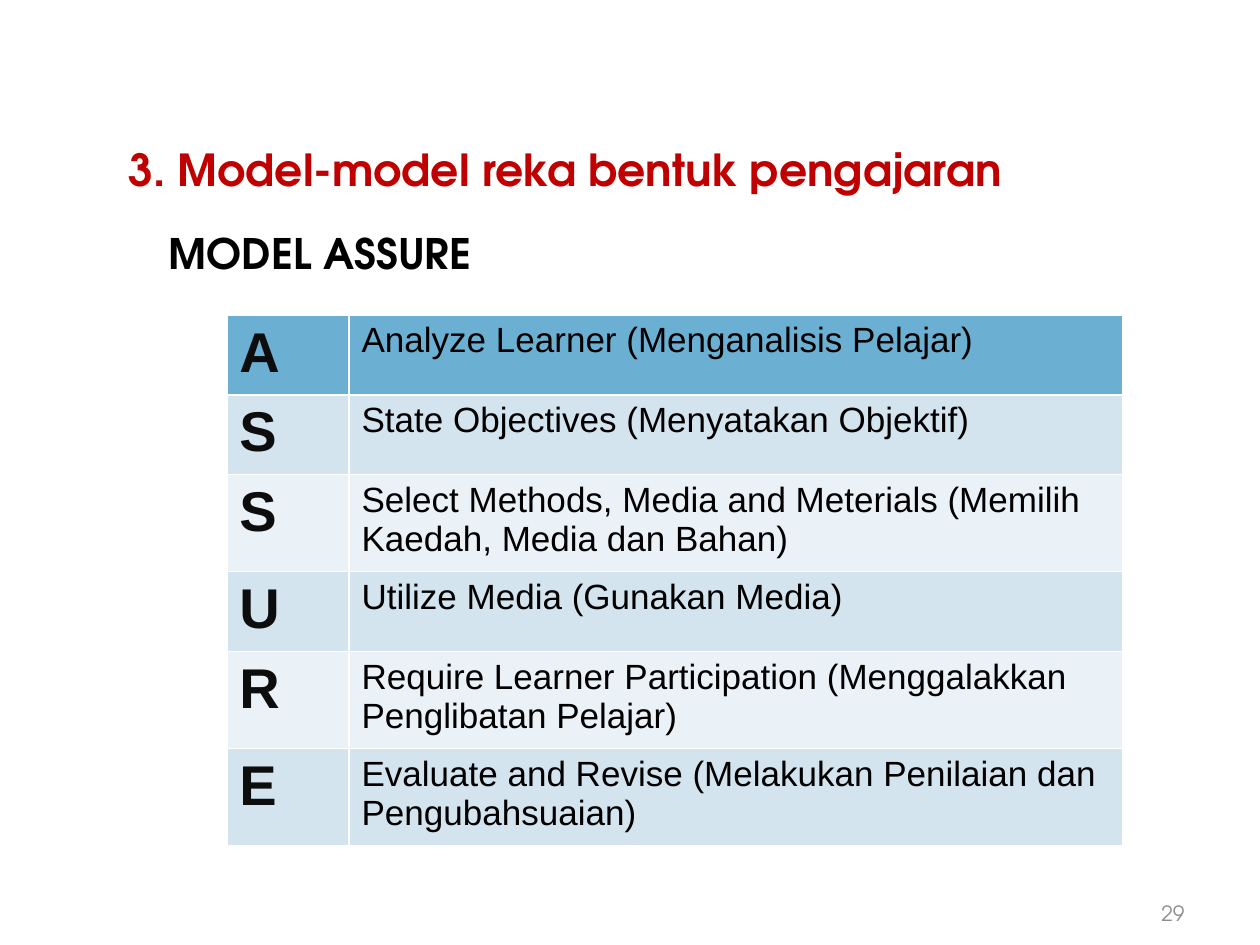
import pptx
import pptx.util
import pptx.dml.color
import pptx.enum.text

Inches, Pt = pptx.util.Inches, pptx.util.Pt
RGBColor = pptx.dml.color.RGBColor
Align, Anchor = pptx.enum.text.PP_ALIGN, pptx.enum.text.MSO_ANCHOR

RED = RGBColor(0xC0, 0x00, 0x00)
BLACK = RGBColor(0x00, 0x00, 0x00)
NEAR_BLACK = RGBColor(0x0D, 0x0D, 0x0D)
GREY = RGBColor(0x8C, 0x8C, 0x8C)
HEADER_BLUE = RGBColor(0x6B, 0xB0, 0xD3)
BAND_DARK = RGBColor(0xD4, 0xE4, 0xEF)
BAND_LIGHT = RGBColor(0xEB, 0xF2, 0xF7)
HEADING_FONT, TABLE_FONT = "TeX Gyre Adventor", "Arial"

STEPS = [
    ("A", "Analyze Learner (Menganalisis Pelajar)", 0.63),
    ("S", "State Objectives (Menyatakan Objektif)", 0.63),
    ("S", "Select Methods, Media and Meterials (Memilih Kaedah, Media dan Bahan)", 0.77),
    ("U", "Utilize Media (Gunakan Media)", 0.63),
    ("R", "Require Learner Participation (Menggalakkan Penglibatan Pelajar)", 0.77),
    ("E", "Evaluate and Revise (Melakukan Penilaian dan Pengubahsuaian)", 0.77),
]


def write(frame, text, color, **font_values):
    """Put one formatted run of text into a text frame."""
    span = frame.paragraphs[0].add_run()
    span.text = text
    span.font.color.rgb = color
    for name, value in font_values.items():
        setattr(span.font, name, value)


def format_frame(frame, **values):
    for name, value in values.items():
        setattr(frame, name, value)


deck = pptx.Presentation()
deck.slide_width, deck.slide_height = Inches(10), Inches(7.5)
page = deck.slides.add_slide(deck.slide_layouts[5])

title = page.shapes.title
title.left, title.top = Inches(0.92), Inches(1.08)
title.width, title.height = Inches(8.92), Inches(0.47)
format_frame(title.text_frame, word_wrap=True, vertical_anchor=Anchor.TOP,
             auto_size=pptx.enum.text.MSO_AUTO_SIZE.NONE)
title.text_frame.paragraphs[0].alignment = Align.LEFT
write(title.text_frame, "3. Model-model reka bentuk pengajaran", RED,
      name=HEADING_FONT, size=Pt(25.2), bold=True)

subtitle = page.shapes.add_textbox(Inches(0.58), Inches(1.76), Inches(9.17), Inches(0.6))
format_frame(subtitle.text_frame, word_wrap=True, margin_left=Inches(0.76))
write(subtitle.text_frame, "MODEL ASSURE", BLACK,
      name=HEADING_FONT, size=Pt(24), bold=True)

table = page.shapes.add_table(len(STEPS), 2, Inches(1.8), Inches(2.5),
                              Inches(7.11), Inches(4.2)).table
for column, width in zip(table.columns, (0.97, 6.14)):
    column.width = Inches(width)
for index, (letter, step, height) in enumerate(STEPS):
    table.rows[index].height = Inches(height)
    band = BAND_DARK if index % 2 else BAND_LIGHT
    letter_cell, step_cell = table.rows[index].cells
    for cell in (letter_cell, step_cell):
        cell.fill.solid()
        cell.fill.fore_color.rgb = band if index else HEADER_BLUE
    write(letter_cell.text_frame, letter, NEAR_BLACK,
          name=TABLE_FONT, size=Pt(32), bold=True)
    write(step_cell.text_frame, step, BLACK,
          name=TABLE_FONT, size=Pt(20), bold=False)

number = page.shapes.add_textbox(Inches(8.95), Inches(7.07), Inches(0.55), Inches(0.35))
format_frame(number.text_frame, word_wrap=True, vertical_anchor=Anchor.MIDDLE)
number.text_frame.paragraphs[0].alignment = Align.RIGHT
write(number.text_frame, "29", GREY, name=HEADING_FONT, size=Pt(12))

deck.save("out.pptx")
